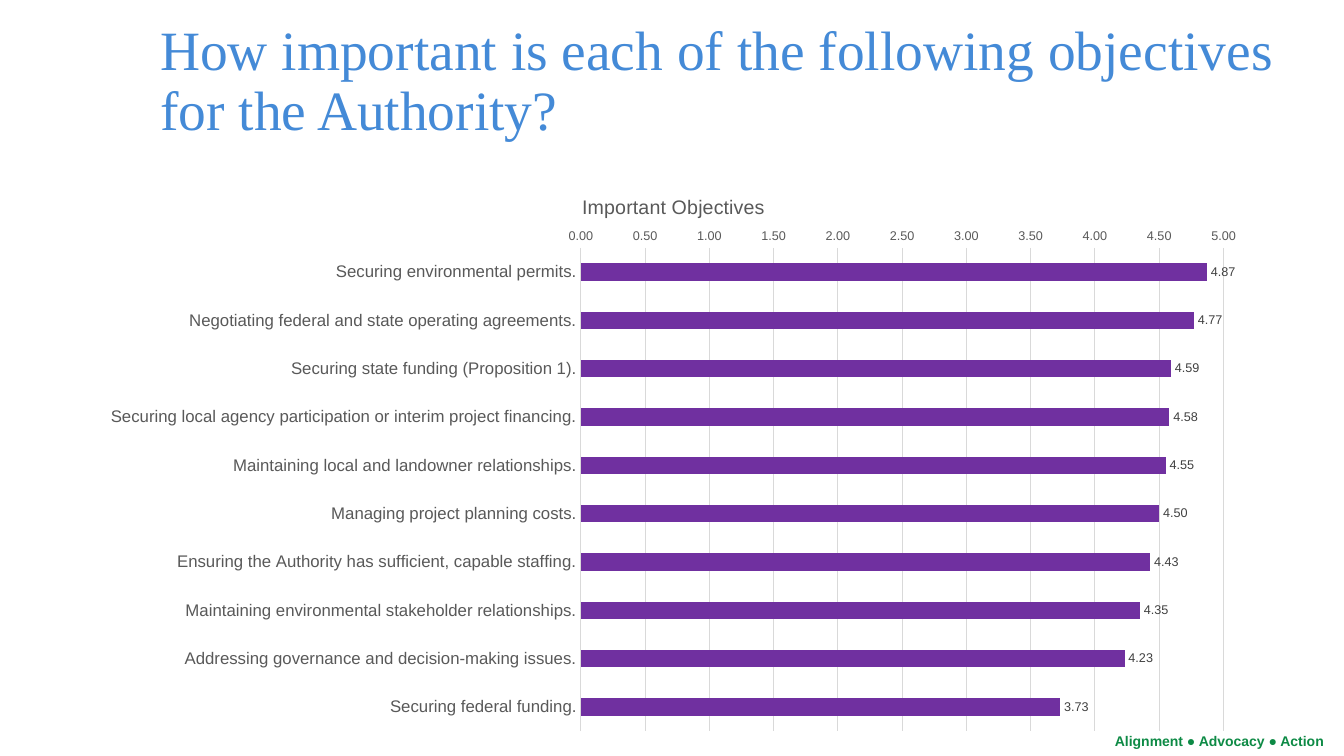
from dataclasses import dataclass

from lxml.etree import SubElement
from pptx import Presentation
from pptx.chart.data import CategoryChartData
from pptx.dml.color import RGBColor
from pptx.enum.chart import XL_CHART_TYPE as ChartType
from pptx.enum.chart import XL_LABEL_POSITION as LabelPosition
from pptx.enum.chart import XL_TICK_MARK as TickMark
from pptx.enum.text import MSO_ANCHOR as Anchor
from pptx.oxml.ns import qn
from pptx.util import Inches, Pt


@dataclass(frozen=True)
class Theme:
    heading_font: str = "Times New Roman"
    body_font: str = "Arial"
    heading: str = "448AD7"
    motto: str = "0D8A45"
    bar: str = "7030A0"
    axis_text: str = "595959"
    label_text: str = "404040"
    grid: str = "D9D9D9"
    heading_size: float = 39.6
    chart_title_size: float = 14
    category_size: float = 12
    motto_size: float = 10
    value_size: float = 9


THEME = Theme()


def style_font(font, *, size, color, name=THEME.body_font, bold=False):
    font.name = name
    font.size = Pt(size)
    font.bold = bold
    font.color.rgb = RGBColor.from_string(color)


def add_text(text, *, box, anchor=Anchor.TOP, line_spacing=1.0, **font_format):
    """Add a wrapped text box; box is left, top, width and height in inches."""
    frame = slide.shapes.add_textbox(*map(Inches, box)).text_frame
    frame.word_wrap = True
    frame.vertical_anchor = anchor
    paragraph = frame.paragraphs[0]
    paragraph.line_spacing = line_spacing
    run = paragraph.add_run()
    run.text = text
    style_font(run.font, **font_format)


prs = Presentation()
prs.slide_width, prs.slide_height = Inches(13.33), Inches(7.5)
slide = prs.slides.add_slide(prs.slide_layouts[6])

add_text("Alignment ● Advocacy ● Action", box=(10.96, 7.22, 2.37, 0.27),
         size=THEME.motto_size, color=THEME.motto, bold=True)

# Objectives and their average scores
scores = {
    "Securing environmental permits.": 4.87,
    "Negotiating federal and state operating agreements.": 4.77,
    "Securing state funding (Proposition 1).": 4.59,
    "Securing local agency participation or interim project financing.": 4.58,
    "Maintaining local and landowner relationships.": 4.55,
    "Managing project planning costs.": 4.5,
    "Ensuring the Authority has sufficient, capable staffing.": 4.43,
    "Maintaining environmental stakeholder relationships.": 4.35,
    "Addressing governance and decision-making issues.": 4.23,
    "Securing federal funding.": 3.73,
}
score_data = CategoryChartData(number_format="0.00")
score_data.categories = list(scores)
score_data.add_series("Series 1", list(scores.values()))

chart = slide.shapes.add_chart(
    ChartType.BAR_CLUSTERED, Inches(0.87), Inches(1.66), Inches(11.59), Inches(5.71),
    score_data).chart
style_font(chart.font, size=THEME.motto_size, color=THEME.axis_text)
chart.has_legend = False
chart.has_title = True
chart_title = chart.chart_title
chart_title.include_in_layout = False
chart_title.text_frame.text = "Important Objectives"
style_font(chart_title.text_frame.paragraphs[0].runs[0].font,
           size=THEME.chart_title_size, color=THEME.axis_text)

objective_axis = chart.category_axis
objective_axis.reverse_order = True
objective_axis.format.line.color.rgb = RGBColor.from_string(THEME.grid)
objective_axis.format.line.width = Pt(0.75)
style_font(objective_axis.tick_labels.font, size=THEME.category_size, color=THEME.axis_text)

score_axis = chart.value_axis
score_axis.minimum_scale, score_axis.maximum_scale, score_axis.major_unit = 0, 5, 0.5
score_axis.format.line.fill.background()
score_axis.major_gridlines.format.line.color.rgb = RGBColor.from_string(THEME.grid)
score_axis.major_gridlines.format.line.width = Pt(0.75)
score_axis.tick_labels.number_format = "0.00"
score_axis.tick_labels.number_format_is_linked = False
style_font(score_axis.tick_labels.font, size=THEME.value_size, color=THEME.axis_text)
for axis in (objective_axis, score_axis):
    axis.major_tick_mark = axis.minor_tick_mark = TickMark.NONE

plot = chart.plots[0]
plot.gap_width = 182
plot.vary_by_categories = False
bars = plot.series[0].format
bars.fill.solid()
bars.fill.fore_color.rgb = RGBColor.from_string(THEME.bar)
plot.has_data_labels = True
labels = plot.data_labels
labels.show_value = True
labels.position = LabelPosition.OUTSIDE_END
labels.number_format = "0.00"
labels.number_format_is_linked = False
style_font(labels.font, size=THEME.value_size, color=THEME.label_text)

# Fixed places inside the chart, as fractions of its size
title_element = chart_title._element
plot_area = chart._chartSpace.chart.plotArea
placements = (
    (title_element, {"xMode": "edge", "yMode": "edge", "x": 0.42, "y": 0.04}),
    (plot_area, {"layoutTarget": "inner", "xMode": "edge", "yMode": "edge",
                 "x": 0.422, "y": 0.14, "w": 0.55, "h": 0.84}),
)
for element, settings in placements:
    layout = element.find(qn("c:layout"))
    if layout is None:
        layout = SubElement(element, qn("c:layout"))
        element.insert(1 if element is title_element else 0, layout)
    manual = SubElement(layout, qn("c:manualLayout"))
    for setting, value in settings.items():
        SubElement(manual, qn(f"c:{setting}")).set("val", str(value))

add_text("How important is each of the following objectives for the Authority?",
         box=(1.49, 0.13, 11.5, 1.37), anchor=Anchor.MIDDLE, line_spacing=0.9,
         size=THEME.heading_size, color=THEME.heading, name=THEME.heading_font)

prs.save("out.pptx")
